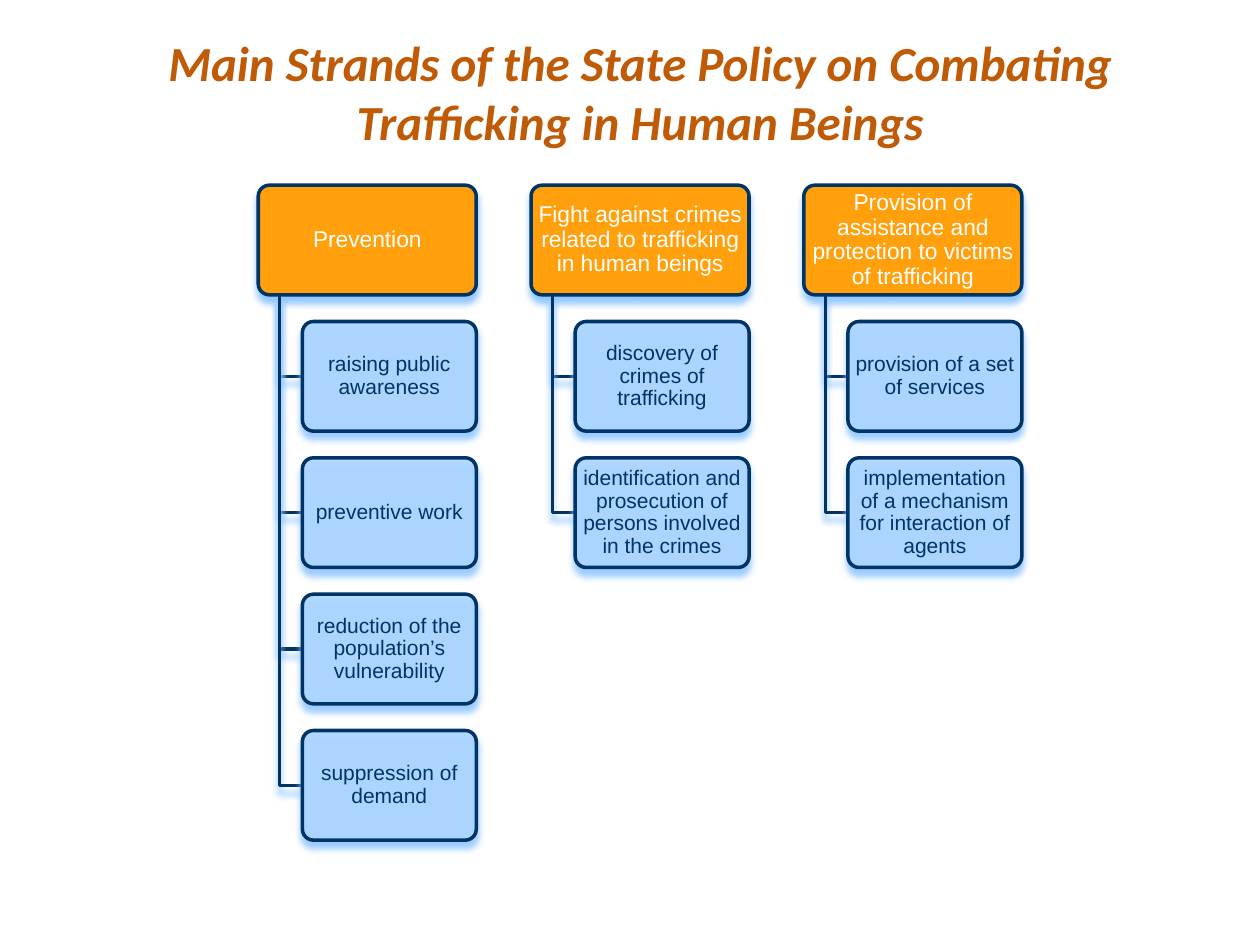
from lxml import etree
from pptx import Presentation
from pptx.dml.color import RGBColor
from pptx.enum.shapes import MSO_SHAPE
from pptx.enum.text import MSO_ANCHOR, MSO_AUTO_SIZE, PP_ALIGN
from pptx.oxml.ns import qn
from pptx.util import Inches, Pt

ROUNDED = MSO_SHAPE.ROUNDED_RECTANGLE
MIDDLE = MSO_ANCHOR.MIDDLE
CENTER = PP_ALIGN.CENTER
GROW = MSO_AUTO_SIZE.SHAPE_TO_FIT_TEXT

COLORS = {
    "title": "BF5B07",
    "strand": "FFA00C",
    "measure": "ADD6FF",
    "navy": "003366",
    "white": "FFFFFF",
    "shadow": "95C9FF",
}

STRANDS = [
    ("Prevention",
     ["raising public awareness", "preventive work",
      "reduction of the population’s vulnerability", "suppression of demand"]),
    ("Fight against crimes related to trafficking in human beings",
     ["discovery of crimes of trafficking",
      "identification and prosecution of persons involved in the crimes"]),
    ("Provision of assistance and protection to victims of trafficking",
     ["provision of a set of services",
      "implementation of a mechanism for interaction of agents"]),
]

LEFT, TOP = 2.05, 1.47
COL_STEP, ROW_STEP = 2.165, 1.082
STRAND_W, MEASURE_W, BOX_H = 1.73, 1.38, 0.87
STEM_X, MEASURE_X = 0.17, 0.35


def outline(sp):
    sp.line.color.rgb = RGBColor.from_string(COLORS["navy"])
    sp.line.width = Pt(2)
    sp.shadow.inherit = False
    effects = sp._element.spPr.find(qn("a:effectLst"))
    shadow = etree.SubElement(effects, qn("a:outerShdw"), blurRad=str(Pt(4)),
                              dist=str(Pt(4)), dir="5400000", rotWithShape="0")
    etree.SubElement(shadow, qn("a:srgbClr"), val=COLORS["shadow"])


def add_box(x, y, w, text, fill, color, size):
    sp = s.shapes.add_shape(ROUNDED, Inches(x), Inches(y), Inches(w), Inches(BOX_H))
    sp.adjustments[0] = 0.1
    sp.fill.solid()
    sp.fill.fore_color.rgb = RGBColor.from_string(COLORS[fill])
    outline(sp)
    tf = sp.text_frame
    tf.word_wrap = True
    tf.vertical_anchor = MIDDLE
    tf.margin_left = tf.margin_right = Inches(0.03)
    tf.margin_top = tf.margin_bottom = Inches(0.02)
    tf.text = text
    p = tf.paragraphs[0]
    p.alignment = CENTER
    p.line_spacing = 0.9
    r = p.runs[0]
    r.font.name = "Arial"
    r.font.size = Pt(size)
    r.font.color.rgb = RGBColor.from_string(COLORS[color])
    return sp


prs = Presentation()
prs.slide_width = Inches(10)
prs.slide_height = Inches(7.5)
s = prs.slides.add_slide(prs.slide_layouts[6])

for col, (strand, measures) in enumerate(STRANDS):
    x = LEFT + col * COL_STEP
    add_box(x, TOP, STRAND_W, strand, "strand", "white", 13)
    for row, measure in enumerate(measures, start=1):
        y = TOP + row * ROW_STEP
        middle = Inches(y + BOX_H / 2)
        builder = s.shapes.build_freeform(Inches(x + STEM_X), Inches(TOP + BOX_H))
        builder.add_line_segments(
            [(Inches(x + STEM_X), middle), (Inches(x + MEASURE_X), middle)], close=False)
        elbow = builder.convert_to_shape()
        elbow.fill.background()
        outline(elbow)
        sp = add_box(x + MEASURE_X, y, MEASURE_W, measure, "measure", "navy", 12)
        fill = sp._element.spPr.find(qn("a:solidFill"))
        etree.SubElement(fill[0], qn("a:alpha"), val="90000")

title = s.shapes.add_textbox(Inches(0.67), Inches(0.21), Inches(8.82), Inches(1.04))
tf = title.text_frame
tf.word_wrap = True
tf.auto_size = GROW
tf.text = "Main Strands of the State Policy on Combating Trafficking in Human Beings"
p = tf.paragraphs[0]
p.alignment = CENTER
r = p.runs[0]
r.font.name = "Calibri"
r.font.size = Pt(28)
r.font.bold = True
r.font.italic = True
r.font.color.rgb = RGBColor.from_string(COLORS["title"])

prs.save("out.pptx")
